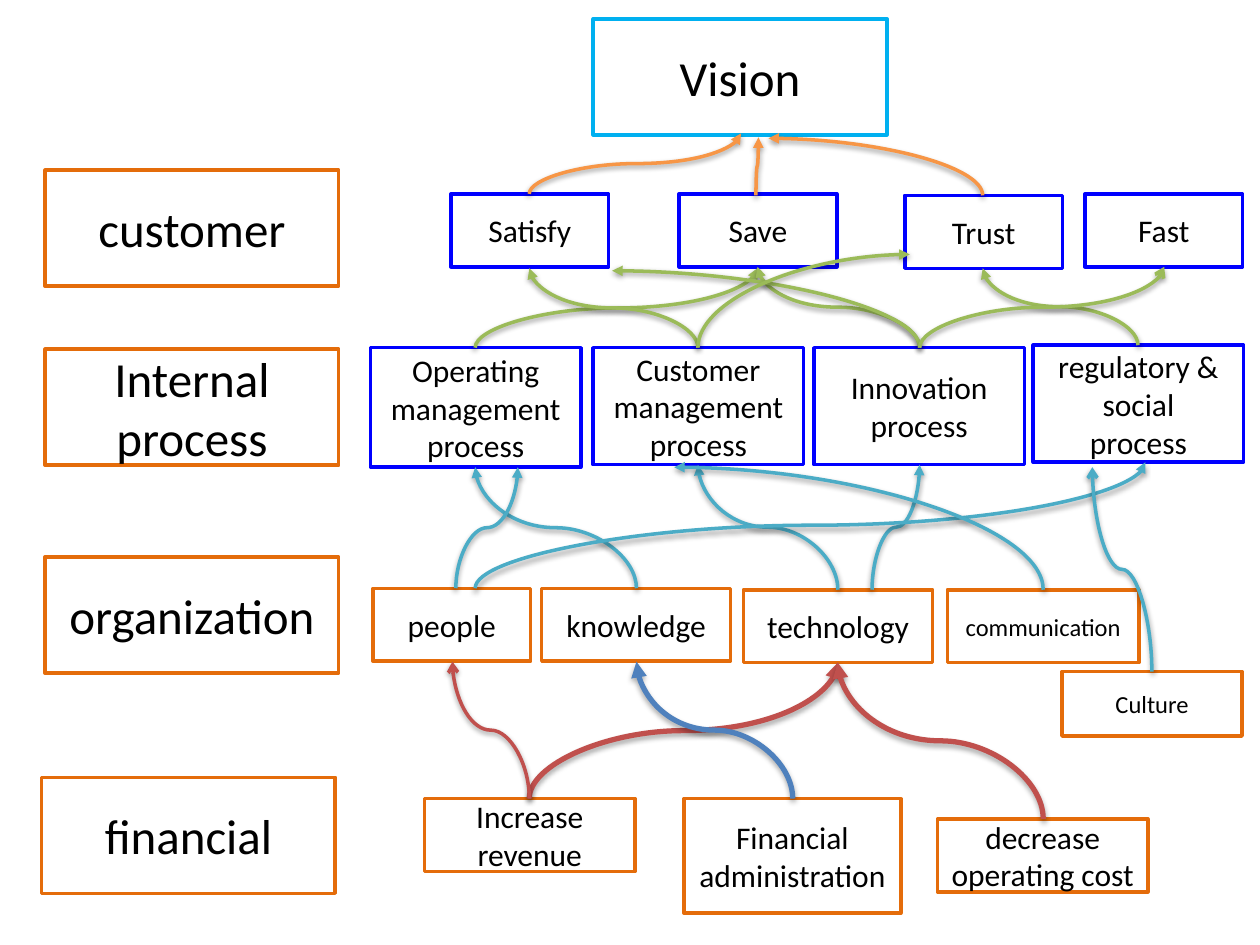
from lxml.etree import SubElement
from pptx import Presentation
from pptx.dml.color import RGBColor
from pptx.enum.shapes import MSO_CONNECTOR as Connector, MSO_SHAPE as Shape
from pptx.enum.text import MSO_ANCHOR as Anchor, PP_ALIGN as Align
from pptx.oxml.ns import qn
from pptx.util import Cm, Pt

BLACK = RGBColor(0x00, 0x00, 0x00)
ORANGE = RGBColor(0xE4, 0x6C, 0x0A)
BLUE = RGBColor(0x00, 0x00, 0xFF)
SKY = RGBColor(0x00, 0xB0, 0xF0)
RED = RGBColor(0xC0, 0x50, 0x4D)
TEAL = RGBColor(0x4B, 0xAC, 0xC6)
GREEN = RGBColor(0x9B, 0xBB, 0x59)
APRICOT = RGBColor(0xF7, 0x96, 0x46)
STEEL = RGBColor(0x4F, 0x81, 0xBD)

LARGE = (5.92, 2.34)
SMALL = (3.18, 1.47)
MEDIUM = (3.81, 1.47)
WIDE = (4.24, 1.47)
PROCESS = (4.24, 2.36)

BOXES = [
    ("financial", 0.84, 15.67, LARGE, ORANGE, 28),
    ("organization", 0.91, 11.23, LARGE, ORANGE, 28),
    ("Internal process", 0.91, 7.04, LARGE, ORANGE, 28),
    ("customer", 0.91, 3.43, LARGE, ORANGE, 28),
    ("Vision", 11.96, 0.38, LARGE, SKY, 28),
    ("people", 7.52, 11.86, SMALL, ORANGE, 18),
    ("knowledge", 10.92, 11.86, MEDIUM, ORANGE, 18),
    ("technology", 14.99, 11.89, MEDIUM, ORANGE, 18),
    ("communication", 19.1, 11.89, (3.86, 1.47), ORANGE, 14),
    ("Culture", 21.41, 13.54, (3.63, 1.3), ORANGE, 14),
    ("Increase revenue", 8.56, 16.1, WIDE, ORANGE, 18),
    ("Financial administration", 13.79, 16.1, (4.37, 2.31), ORANGE, 18),
    ("decrease operating cost", 18.9, 16.51, WIDE, ORANGE, 18),
    ("Satisfy", 9.09, 3.91, SMALL, BLUE, 18),
    ("Save", 13.69, 3.91, SMALL, BLUE, 18),
    ("Trust", 18.24, 3.94, SMALL, BLUE, 18),
    ("Fast", 21.87, 3.91, SMALL, BLUE, 18),
    ("Operating management\nprocess", 7.47, 7.01, (4.24, 2.41), BLUE, 18),
    ("Customer management\nprocess", 11.96, 7.01, PROCESS, BLUE, 18),
    ("Innovation process", 16.41, 7.01, PROCESS, BLUE, 18),
    ("regulatory & social\nprocess", 20.83, 6.96, PROCESS, BLUE, 18),
]

S_CURVE, ARC = "curvedConnector3", "curvedConnector2"
ARROWS = [
    (10.67, 16.1, 16.89, 13.36, RED, 3, S_CURVE, "triangle"),
    (12.83, 11.86, 9.58, 9.42, TEAL, 2, S_CURVE, "triangle"),
    (9.19, 11.86, 10.44, 9.42, TEAL, 2, S_CURVE, "triangle"),
    (16.89, 11.89, 14.07, 9.37, TEAL, 2, S_CURVE, "triangle"),
    (17.58, 11.89, 18.54, 9.37, TEAL, 2, S_CURVE, "triangle"),
    (9.58, 11.86, 23.09, 9.32, TEAL, 2, S_CURVE, "triangle"),
    (21.03, 11.89, 13.59, 9.42, TEAL, 2, ARC, "triangle"),
    (9.58, 7.01, 15.27, 5.41, GREEN, 2, S_CURVE, "triangle"),
    (14.07, 7.01, 10.67, 5.41, GREEN, 2, S_CURVE, "triangle"),
    (18.54, 7.01, 15.27, 5.38, GREEN, 2, S_CURVE, "triangle"),
    (18.54, 7.01, 12.34, 5.46, GREEN, 2, ARC, "triangle"),
    (22.94, 6.96, 19.81, 5.41, GREEN, 2, S_CURVE, "triangle"),
    (14.07, 7.01, 18.34, 5.13, GREEN, 2, ARC, "triangle"),
    (10.67, 3.91, 14.94, 2.69, APRICOT, 2, S_CURVE, "triangle"),
    (15.24, 3.94, 15.29, 2.77, APRICOT, 2, S_CURVE, "triangle"),
    (19.81, 3.94, 15.49, 2.79, APRICOT, 2, ARC, "triangle"),
    (15.98, 16.1, 12.83, 13.34, STEEL, 3, S_CURVE, "triangle"),
    (21.03, 16.51, 16.89, 13.36, RED, 3, S_CURVE, "triangle"),
    (10.67, 16.1, 9.12, 13.34, RED, 2, S_CURVE, "arrow"),
    (18.54, 7.01, 23.47, 5.38, GREEN, 2, S_CURVE, "arrow"),
    (23.22, 13.54, 22.02, 9.42, TEAL, 2, S_CURVE, "arrow"),
]
RIGHTWARD = {"rot": "5400000", "flipH": "1", "flipV": "1"}
LEFTWARD = {"rot": "16200000", "flipV": "1"}
SHADOWS = {2: ("20000", "38000"), 3: ("23000", "35000")}

presentation = Presentation()
presentation.slide_width = Cm(25.4)
presentation.slide_height = Cm(19.05)
slide = presentation.slides.add_slide(presentation.slide_layouts[6])

for text, left, top, (width, height), color, size in BOXES:
    shape = slide.shapes.add_shape(Shape.RECTANGLE, Cm(left), Cm(top), Cm(width), Cm(height))
    shape.shadow.inherit = False
    shape.fill.background()
    shape.line.color.rgb = color
    shape.line.width = Pt(2)
    frame = shape.text_frame
    frame.word_wrap = True
    frame.vertical_anchor = Anchor.MIDDLE
    frame.text = text
    for paragraph in frame.paragraphs:
        paragraph.alignment = Align.CENTER
        for name, value in {"name": "Calibri", "size": Pt(size)}.items():
            setattr(paragraph.font, name, value)
        paragraph.font.color.rgb = BLACK

for x1, y1, x2, y2, color, weight, geometry, head in ARROWS:
    across, rise = abs(x2 - x1), y1 - y2
    left = (x1 + x2 - rise) / 2
    top = (y1 + y2 - across) / 2
    connector = slide.shapes.add_connector(
        Connector.CURVE, Cm(left), Cm(top), Cm(left + rise), Cm(top + across))
    connector.line.color.rgb = color
    connector.line.width = Pt(weight)
    properties = connector._element.spPr
    transform = properties.find(qn("a:xfrm"))
    for name, value in (RIGHTWARD if x2 > x1 else LEFTWARD).items():
        transform.set(name, value)
    properties.find(qn("a:prstGeom")).set("prst", geometry)
    SubElement(properties.find(qn("a:ln")), qn("a:tailEnd"), type=head)
    distance, opacity = SHADOWS[weight]
    effects = SubElement(properties, qn("a:effectLst"))
    shadow = SubElement(effects, qn("a:outerShdw"), blurRad="40000",
                        dist=distance, dir="5400000", rotWithShape="0")
    shadow_color = SubElement(shadow, qn("a:srgbClr"), val=str(BLACK))
    SubElement(shadow_color, qn("a:alpha"), val=opacity)

presentation.save("out.pptx")
